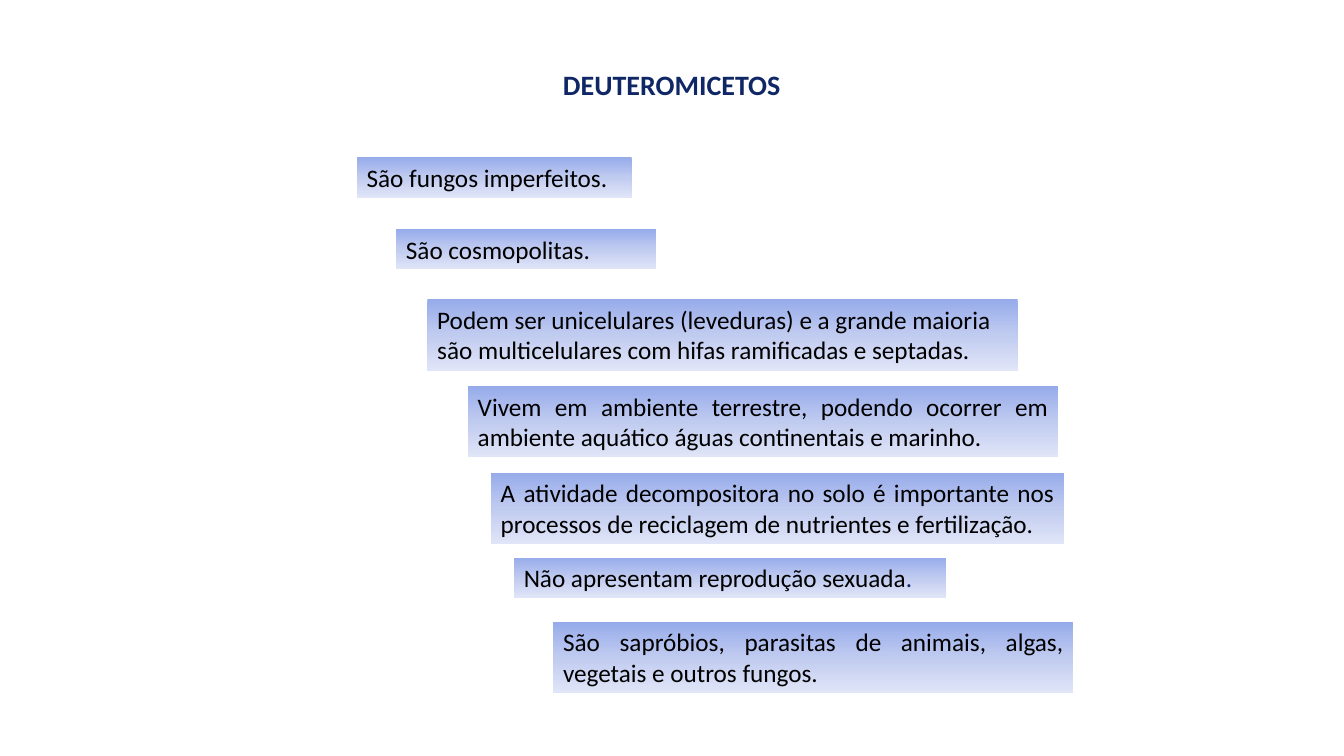
from copy import deepcopy
from dataclasses import dataclass

from pptx import Presentation
from pptx.dml.color import RGBColor
from pptx.enum.shapes import MSO_SHAPE as Shape
from pptx.enum.text import MSO_ANCHOR as Anchor, MSO_AUTO_SIZE as AutoSize, PP_ALIGN as Align
from pptx.oxml.ns import qn
from pptx.util import Cm, Pt


@dataclass(frozen=True)
class Theme:
    font: str = "Calibri"
    title_size: int = 20
    body_size: int = 18
    navy: str = "102766"
    black: str = "000000"
    gradient: tuple = ((0, "96ABEA"), (0.5, "C0CBF0"), (1, "E0E5F7"))


THEME = Theme()
LINE_HEIGHTS = {1: 1.02, 2: 1.8}

# Left, top, width (cm), number of lines, alignment, text
FACTS = [
    (8.99, 3.96, 6.93, 1, Align.LEFT, "São fungos imperfeitos."),
    (9.98, 5.77, 6.55, 1, Align.LEFT, "São cosmopolitas."),
    (10.77, 7.54, 14.88, 2, Align.LEFT,
     "Podem ser unicelulares (leveduras) e a grande maioria são multicelulares "
     "com hifas ramificadas e septadas."),
    (11.79, 9.73, 14.88, 2, Align.JUSTIFY,
     "Vivem em ambiente terrestre, podendo ocorrer em ambiente aquático águas "
     "continentais e marinho."),
    (12.37, 11.91, 14.45, 2, Align.JUSTIFY,
     "A atividade decompositora no solo é importante nos processos de reciclagem "
     "de nutrientes e fertilização."),
    (12.95, 14.05, 10.9, 1, Align.JUSTIFY, "Não apresentam reprodução sexuada"),
    (13.94, 15.67, 13.11, 2, Align.JUSTIFY,
     "São sapróbios, parasitas de animais, algas, vegetais e outros fungos."),
]
NAVY_STOP_AFTER = "Não apresentam reprodução sexuada"


def write_text(box, text, size, color, align, bold=False):
    frame = box.text_frame
    frame.word_wrap = True
    frame.auto_size = AutoSize.SHAPE_TO_FIT_TEXT
    frame.vertical_anchor = Anchor.TOP
    para = frame.paragraphs[0]
    para.alignment = align
    para.add_run().text = text
    para.font.name = THEME.font
    para.font.size = Pt(size)
    para.font.bold = bold
    para.font.color.rgb = RGBColor.from_string(color)
    return para


def fill_gradient(box):
    box.fill.gradient()
    box.fill.gradient_angle = 270
    # The default gradient has two stops; add the middle one
    stop_list = box._element.spPr.find(".//" + qn("a:gsLst"))
    stop_list.insert(1, deepcopy(stop_list[0]))
    for stop, (position, color) in zip(box.fill.gradient_stops, THEME.gradient):
        stop.position = position
        stop.color.rgb = RGBColor.from_string(color)


def add_title(page, left, top, width, height):
    box = page.shapes.add_textbox(Cm(left), Cm(top), Cm(width), Cm(height))
    write_text(box, "DEUTEROMICETOS", THEME.title_size, THEME.navy, Align.CENTER, bold=True)


def add_fact(page, left, top, width, lines, align, text):
    box = page.shapes.add_shape(
        Shape.RECTANGLE, Cm(left), Cm(top), Cm(width), Cm(LINE_HEIGHTS[lines]))
    box.shadow.inherit = False
    box.line.fill.background()
    fill_gradient(box)
    para = write_text(box, text, THEME.body_size, THEME.black, align)
    if text == NAVY_STOP_AFTER:
        span = para.add_run()
        span.text = "."
        span.font.color.rgb = RGBColor.from_string(THEME.navy)


def main():
    deck = Presentation()
    deck.slide_width, deck.slide_height = Cm(33.87), Cm(19.05)
    page = deck.slides.add_slide(deck.slide_layouts[6])
    add_title(page, 7.01, 1.57, 19.84, 1.12)
    # Staircase of facts
    for fact in FACTS:
        add_fact(page, *fact)
    deck.save("out.pptx")


if __name__ == "__main__":
    main()
